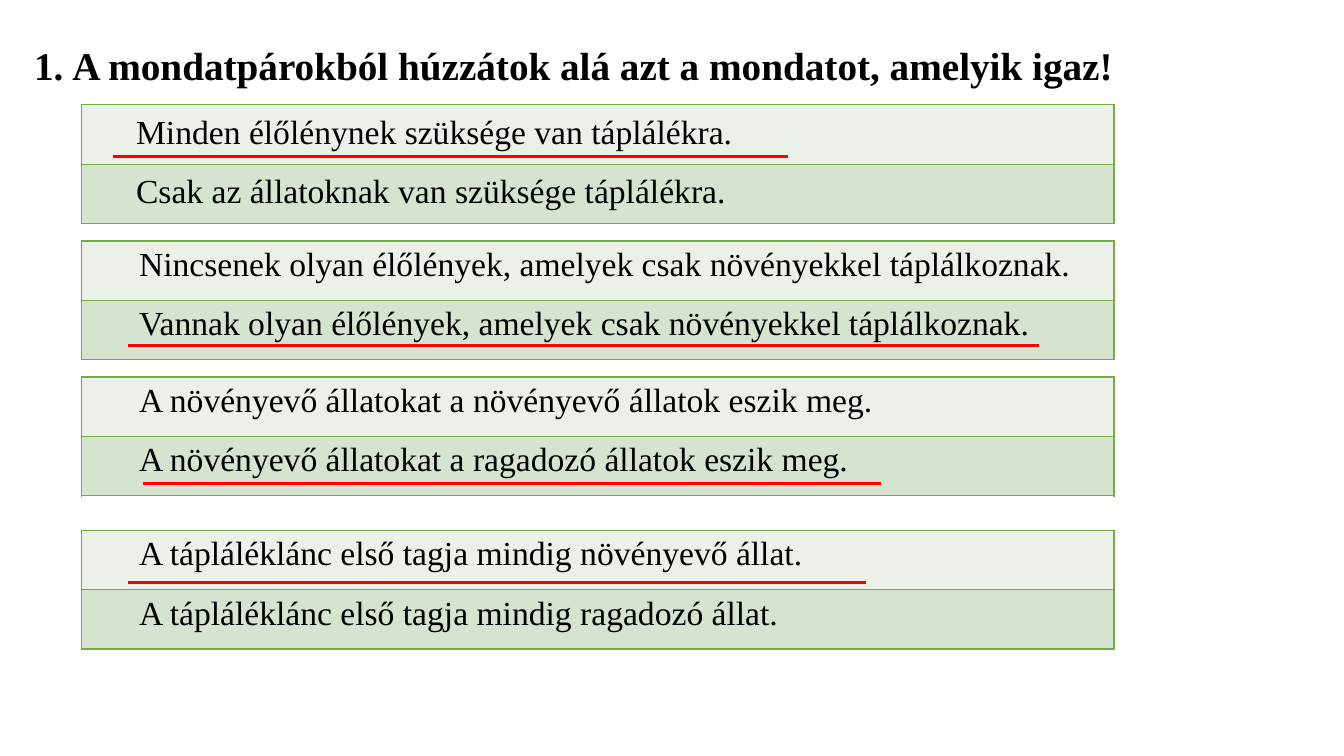
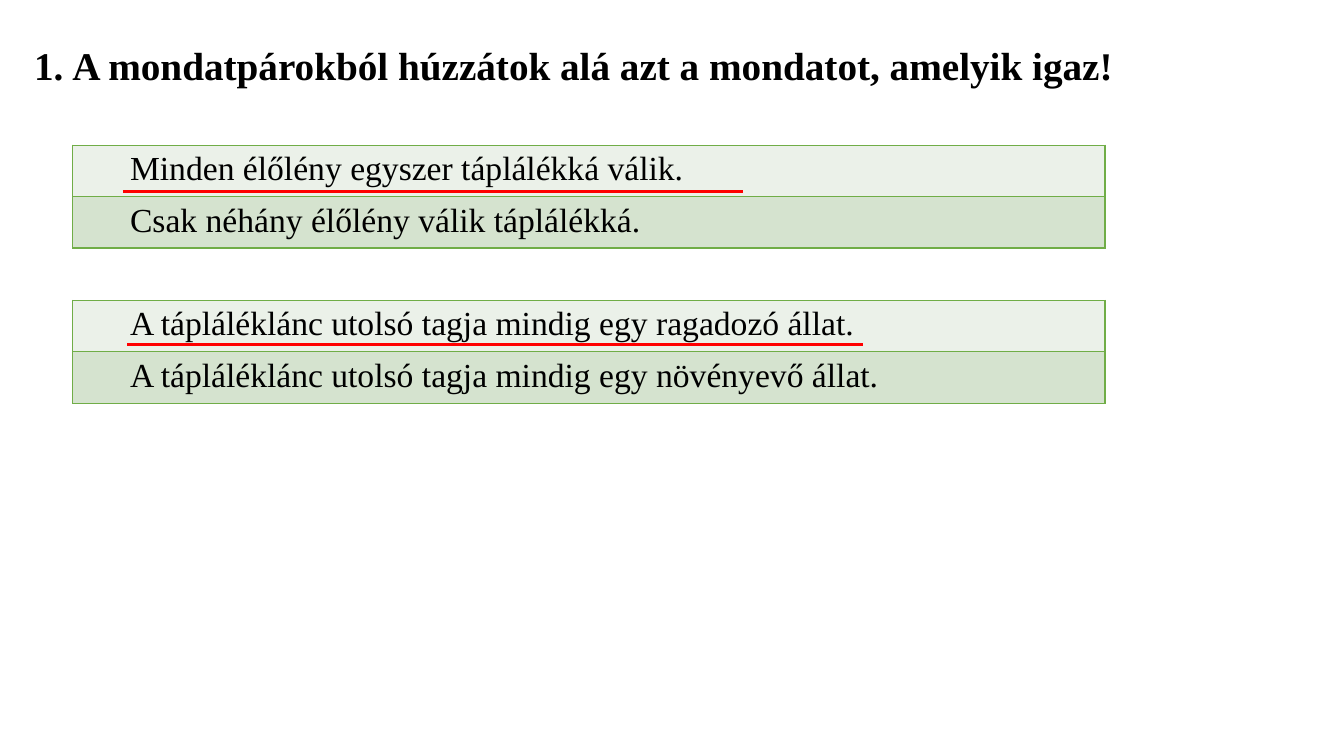
from pptx import Presentation
from pptx.dml.color import RGBColor
from pptx.enum.shapes import MSO_CONNECTOR
from pptx.enum.text import MSO_AUTO_SIZE
from pptx.oxml.ns import qn
from pptx.util import Inches, Pt
from lxml import etree

STRAIGHT = MSO_CONNECTOR.STRAIGHT
GROW = MSO_AUTO_SIZE.SHAPE_TO_FIT_TEXT

COLORS = {
    "text": "000000",
    "border": "70AD47",
    "first_row": "EBF1E9",
    "second_row": "D5E3CF",
    "underline": "FF0000",
}
FONT = "Times New Roman"
TITLE_FORMAT = {"name": FONT, "size": Pt(28), "bold": True}
SENTENCE_FORMAT = {"name": FONT, "size": Pt(24), "bold": False}

TITLE = "A mondatpárokból húzzátok alá azt a mondatot, amelyik igaz!"
TABLE_WIDTH = 10.24
WIDE_MARGINS = (0.07, 0)
EVEN_MARGINS = (0.04, 0.04)

# Each pair: table top, cell margins (side, top and bottom), two sentences,
# underline of the true sentence (start, end, height)
SLIDES = [
    {
        "left": 0.81,
        "row_height": 0.59,
        "pairs": [
            (1.04, EVEN_MARGINS,
             ("Minden élőlénynek szüksége van táplálékra.",
              "Csak az állatoknak van szüksége táplálékra."),
             (1.12, 7.82, 1.55)),
            (2.39, WIDE_MARGINS,
             ("Nincsenek olyan élőlények, amelyek csak növényekkel táplálkoznak.",
              "Vannak olyan élőlények, amelyek csak növényekkel táplálkoznak."),
             (1.27, 10.3, 3.43)),
            (3.74, WIDE_MARGINS,
             ("A növényevő állatokat a növényevő állatok eszik meg.",
              "A növényevő állatokat a ragadozó állatok eszik meg."),
             (1.42, 8.74, 4.8)),
            (5.26, WIDE_MARGINS,
             ("A tápláléklánc első tagja mindig növényevő állat.",
              "A tápláléklánc első tagja mindig ragadozó állat."),
             (1.27, 8.59, 5.78)),
        ],
    },
    {
        "left": 0.72,
        "row_height": 0.51,
        "pairs": [
            (1.44, WIDE_MARGINS,
             ("Minden élőlény egyszer táplálékká válik.",
              "Csak néhány élőlény válik táplálékká."),
             (1.22, 7.37, 1.9)),
            (2.98, WIDE_MARGINS,
             ("A tápláléklánc utolsó tagja mindig egy ragadozó állat.",
              "A tápláléklánc utolsó tagja mindig egy növényevő állat."),
             (1.26, 8.56, 3.42)),
        ],
    },
]


def rgb(name):
    return RGBColor.from_string(COLORS[name])


def write_paragraph(paragraph, text, font_format, line_spacing, left, first_line=0):
    properties = paragraph._p.get_or_add_pPr()
    properties.set("marL", str(Inches(left)))
    properties.set("indent", str(Inches(first_line)))
    paragraph.line_spacing = line_spacing
    run = paragraph.add_run()
    run.text = text
    for attribute, value in font_format.items():
        setattr(run.font, attribute, value)
    run.font.color.rgb = rgb("text")


def add_title(slide):
    shape = slide.shapes.add_textbox(Inches(0.24), Inches(0.13), Inches(12.14), Inches(0.74))
    frame = shape.text_frame
    frame.word_wrap = True
    frame.auto_size = GROW
    paragraph = frame.paragraphs[0]
    # Automatic numbering
    etree.SubElement(paragraph._p.get_or_add_pPr(), qn("a:buAutoNum"), type="arabicPeriod")
    write_paragraph(paragraph, TITLE, TITLE_FORMAT, 1.5, 0.38, -0.38)


def add_cell_borders(cell):
    properties = cell._tc.get_or_add_tcPr()
    for side in ("a:lnL", "a:lnR", "a:lnT", "a:lnB"):
        line = etree.SubElement(properties, qn(side), w=str(Pt(1)))
        fill = etree.SubElement(line, qn("a:solidFill"))
        etree.SubElement(fill, qn("a:srgbClr"), val=COLORS["border"])


def add_sentence_pair(slide, left, top, row_height, margins, sentences):
    frame = slide.shapes.add_table(len(sentences), 1, Inches(left), Inches(top),
                                   Inches(TABLE_WIDTH), Inches(row_height * len(sentences)))
    table = frame.table
    table.first_row = table.horz_banding = False
    side, edge = (Inches(margin) for margin in margins)
    for row, sentence, fill in zip(table.rows, sentences, ("first_row", "second_row")):
        row.height = Inches(row_height)
        cell = row.cells[0]
        cell.margin_left = cell.margin_right = side
        cell.margin_top = cell.margin_bottom = edge
        add_cell_borders(cell)
        cell.fill.solid()
        cell.fill.fore_color.rgb = rgb(fill)
        write_paragraph(cell.text_frame.paragraphs[0], sentence, SENTENCE_FORMAT, 1.15, 0.5)


def add_underline(slide, start, end, height):
    connector = slide.shapes.add_connector(STRAIGHT, Inches(start), Inches(height),
                                           Inches(end), Inches(height))
    connector.line.color.rgb = rgb("underline")
    connector.line.width = Pt(2.25)
    etree.SubElement(connector._element.spPr, qn("a:effectLst"))


def main():
    presentation = Presentation()
    presentation.slide_width = Inches(13.33)
    presentation.slide_height = Inches(7.5)
    blank_layout = presentation.slide_layouts[6]
    for content in SLIDES:
        slide = presentation.slides.add_slide(blank_layout)
        add_title(slide)
        for top, margins, sentences, _ in content["pairs"]:
            add_sentence_pair(slide, content["left"], top, content["row_height"],
                              margins, sentences)
        # Underlines lie above the tables
        for *_, underline in content["pairs"]:
            add_underline(slide, *underline)
    presentation.save("out.pptx")


if __name__ == "__main__":
    main()
